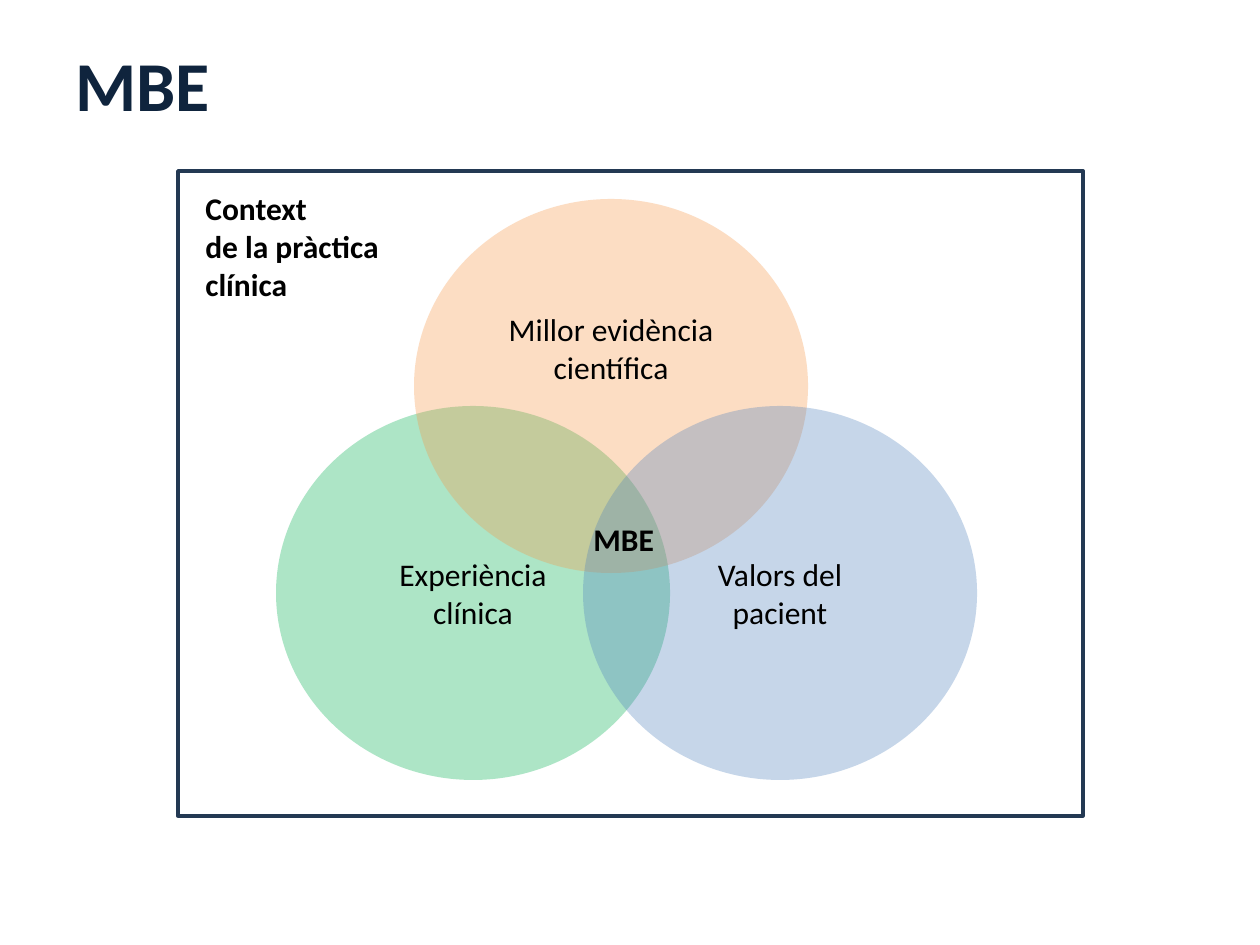
from dataclasses import dataclass

from lxml import etree
from pptx import Presentation
from pptx import util as u
from pptx.dml.color import RGBColor
from pptx.enum import shapes, text
from pptx.oxml.ns import qn

PX = 914400 / 126
FONT = "Calibri"
BLACK = RGBColor(0x00, 0x00, 0x00)
NAVY = RGBColor(0x0F, 0x24, 0x3D)
FRAME = RGBColor(0x23, 0x39, 0x53)
GREEN = RGBColor(0x00, 0xB0, 0x50)
ORANGE = RGBColor(0xF7, 0x96, 0x46)
BLUE = RGBColor(0x4F, 0x81, 0xBD)
ALPHA = 32
WIDE, HIGH = 394, 374


@dataclass
class Circle:
    left: int
    top: int
    fill: RGBColor
    lines: list[str]
    foot: int = 6


@dataclass
class Label:
    left: int
    top: int
    width: int
    height: int
    lines: list[str]


CIRCLES = [
    Circle(276, 406, GREEN, ["Experiència", "clínica"]),
    Circle(414, 199, ORANGE, ["Millor evidència", "científica"], foot=83),
    Circle(583, 406, BLUE, ["Valors del", "pacient"]),
]
LABELS = [
    Label(581, 514, 118, 50, ["MBE"]),
    Label(193, 183, 213, 165, ["Context", "de la pràctica clínica"]),
]


def emu(*sizes: int) -> list[int]:
    return [round(size * PX) for size in sizes]


def write(frame, lines: list[str], align, size: int = 18,
          color: RGBColor = BLACK, bold: bool = False) -> None:
    """Put the lines in one paragraph, parted by line breaks."""
    frame.word_wrap = True
    para = frame.paragraphs[0]
    para.alignment = align
    for i, line in enumerate(lines):
        if i:
            para.add_line_break()
        run = para.add_run()
        run.text = line
        run.font.name = FONT
        run.font.size = u.Pt(size)
        run.font.bold = bold
        run.font.color.rgb = color


def draw_circle(slide, item: Circle) -> None:
    oval = slide.shapes.add_shape(
        shapes.MSO_SHAPE.OVAL, *emu(item.left, item.top, WIDE, HIGH))
    oval.shadow.inherit = False
    oval.line.fill.background()
    oval.fill.solid()
    oval.fill.fore_color.rgb = item.fill
    color = oval.fill._xPr.find(f".//{qn('a:srgbClr')}")
    etree.SubElement(color, qn("a:alpha")).set("val", str(ALPHA * 1000))
    frame = oval.text_frame
    frame.vertical_anchor = text.MSO_ANCHOR.MIDDLE
    frame.margin_bottom = emu(item.foot)[0]
    write(frame, item.lines, text.PP_ALIGN.CENTER)


def draw_label(slide, item: Label) -> None:
    box = slide.shapes.add_textbox(
        *emu(item.left, item.top, item.width, item.height))
    write(box.text_frame, item.lines, text.PP_ALIGN.LEFT, bold=True)


def draw_frame(slide) -> None:
    rect = slide.shapes.add_shape(
        shapes.MSO_SHAPE.RECTANGLE, *emu(178, 171, 905, 645))
    rect.shadow.inherit = False
    rect.fill.background()
    rect.line.color.rgb = FRAME
    rect.line.width = u.Pt(2)


def set_title(slide) -> None:
    title = slide.shapes.title
    title.left, title.top, title.width, title.height = emu(63, 0, 1134, 132)
    frame = title.text_frame
    frame.auto_size = text.MSO_AUTO_SIZE.NONE
    frame.vertical_anchor = text.MSO_ANCHOR.BOTTOM
    write(frame, ["MBE"], text.PP_ALIGN.LEFT, 40, NAVY, True)


def main() -> None:
    deck = Presentation()
    deck.slide_width, deck.slide_height = u.Inches(10), u.Inches(7.5)
    slide = deck.slides.add_slide(deck.slide_layouts[5])
    for item in CIRCLES:
        draw_circle(slide, item)
    draw_frame(slide)
    for item in LABELS:
        draw_label(slide, item)
    set_title(slide)
    deck.save("out.pptx")


if __name__ == "__main__":
    main()
